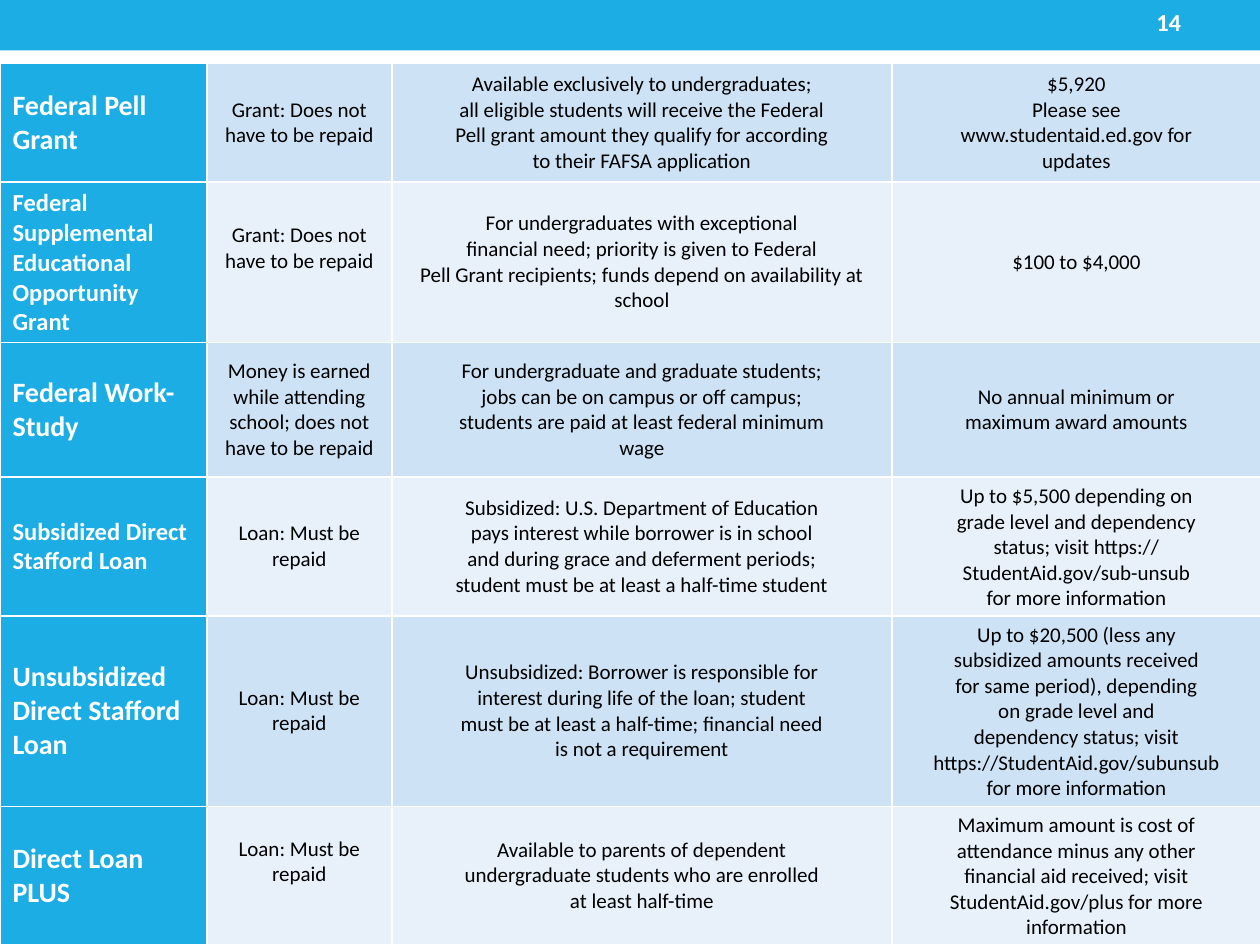
from lxml import etree
from pptx import Presentation
from pptx.dml.color import RGBColor
from pptx.enum import shapes, text
from pptx.oxml import ns
from pptx.util import Cm, Pt

COLORS = {"accent": "1CADE4", "band": "CDE3F5", "pale": "E8F1FA",
          "white": "FFFFFF", "black": "000000"}
HEADING = {"name": "Calibri", "size": Pt(16), "bold": True}
SMALL_HEADING = {**HEADING, "size": Pt(14)}
BODY = {"name": "Calibri", "size": Pt(12), "bold": False}

COLUMNS = [4.17, 3.73, 10.08, 7.44]
GRANT = "Grant: Does not\nhave to be repaid"
LOAN = "Loan: Must be\nrepaid"
AID = [
    (2.39, HEADING, 0, "Federal Pell Grant", GRANT,
     "Available exclusively to undergraduates;\n"
     "all eligible students will receive the Federal\n"
     "Pell grant amount they qualify for according\n"
     "to their FAFSA application",
     "$5,920\nPlease see\nwww.studentaid.ed.gov for\nupdates"),
    (3.23, SMALL_HEADING, 0.55, "Federal Supplemental Educational Opportunity Grant", GRANT,
     "For undergraduates with exceptional\n"
     "financial need; priority is given to Federal\n"
     "Pell Grant recipients; funds depend on availability at school",
     "$100 to $4,000"),
    (2.72, HEADING, 0, "Federal Work-Study",
     "Money is earned\nwhile attending\nschool; does not\nhave to be repaid",
     "For undergraduate and graduate students;\n"
     "jobs can be on campus or off campus;\n"
     "students are paid at least federal minimum\n"
     "wage",
     "No annual minimum or\nmaximum award amounts"),
    (2.79, SMALL_HEADING, 0, "Subsidized Direct Stafford Loan", LOAN,
     "Subsidized: U.S. Department of Education\n"
     "pays interest while borrower is in school\n"
     "and during grace and deferment periods;\n"
     "student must be at least a half-time student",
     "Up to $5,500 depending on\n"
     "grade level and dependency\n"
     "status; visit https://\n"
     "StudentAid.gov/sub-unsub\n"
     "for more information"),
    (3.84, HEADING, 0, "Unsubsidized Direct Stafford Loan", LOAN,
     "Unsubsidized: Borrower is responsible for\n"
     "interest during life of the loan; student\n"
     "must be at least a half-time; financial need\n"
     "is not a requirement",
     "Up to $20,500 (less any\n"
     "subsidized amounts received\n"
     "for same period), depending\n"
     "on grade level and\n"
     "dependency status; visit\n"
     "https://StudentAid.gov/subunsub\n"
     "for more information"),
    (2.79, HEADING, 0.55, "Direct Loan PLUS", LOAN,
     "Available to parents of dependent\n"
     "undergraduate students who are enrolled\n"
     "at least half-time",
     "Maximum amount is cost of\n"
     "attendance minus any other\n"
     "financial aid received; visit\n"
     "StudentAid.gov/plus for more\n"
     "information"),
]


def rgb(name):
    return RGBColor.from_string(COLORS[name])


def write(tf, content, font, color, align):
    tf.word_wrap = True
    tf.text = content
    for p in tf.paragraphs:
        p.alignment = align
        for r in p.runs:
            for key, value in font.items():
                setattr(r.font, key, value)
            r.font.color.rgb = rgb(color)


def add_borders(cell):
    tc_pr = cell._tc.get_or_add_tcPr()
    for side in ("lnL", "lnR", "lnT", "lnB"):
        line = etree.SubElement(tc_pr, ns.qn("a:" + side), w=str(Pt(1)))
        fill = etree.SubElement(line, ns.qn("a:solidFill"))
        etree.SubElement(fill, ns.qn("a:srgbClr"), val=COLORS["white"])


def add_header(s, left, top, width, height):
    sp = s.shapes.add_shape(shapes.MSO_SHAPE.RECTANGLE,
                            Cm(left), Cm(top), Cm(width), Cm(height))
    sp.shadow.inherit = False
    sp.fill.solid()
    sp.fill.fore_color.rgb = rgb("accent")
    sp.line.fill.background()

    number = s.shapes.add_textbox(Cm(left + width - 2.34), Cm(top + 0.05), Cm(1.07), Cm(0.79))
    tf = number.text_frame
    tf.vertical_anchor = text.MSO_ANCHOR.MIDDLE
    write(tf, "14", SMALL_HEADING, "white", text.PP_ALIGN.LEFT)


def add_aid_table(s, left, top):
    heights = [row[0] for row in AID]
    table = s.shapes.add_table(len(AID), len(COLUMNS), Cm(left), Cm(top),
                               Cm(sum(COLUMNS)), Cm(sum(heights))).table
    table.first_row = table.horz_banding = False
    for column, width in zip(table.columns, COLUMNS):
        column.width = Cm(width)

    for i, (height, heading, lift, *contents) in enumerate(AID):
        table.rows[i].height = Cm(height)
        for j, content in enumerate(contents):
            cell = table.cell(i, j)
            add_borders(cell)
            cell.fill.solid()
            cell.vertical_anchor = text.MSO_ANCHOR.MIDDLE
            if j == 0:
                fill = "accent"
                write(cell.text_frame, content, heading, "white", text.PP_ALIGN.LEFT)
            else:
                fill = "pale" if i % 2 else "band"
                write(cell.text_frame, content, BODY, "black", text.PP_ALIGN.CENTER)
            cell.fill.fore_color.rgb = rgb(fill)
            if j == 1:
                cell.margin_bottom = Cm(0.13 + lift)


def main():
    prs = Presentation()
    prs.slide_width, prs.slide_height = Cm(25.4), Cm(19.05)
    s = prs.slides.add_slide(prs.slide_layouts[6])
    add_header(s, 0, 0, 25.4, 1.02)
    add_aid_table(s, 0, 1.28)
    prs.save("out.pptx")


if __name__ == "__main__":
    main()
